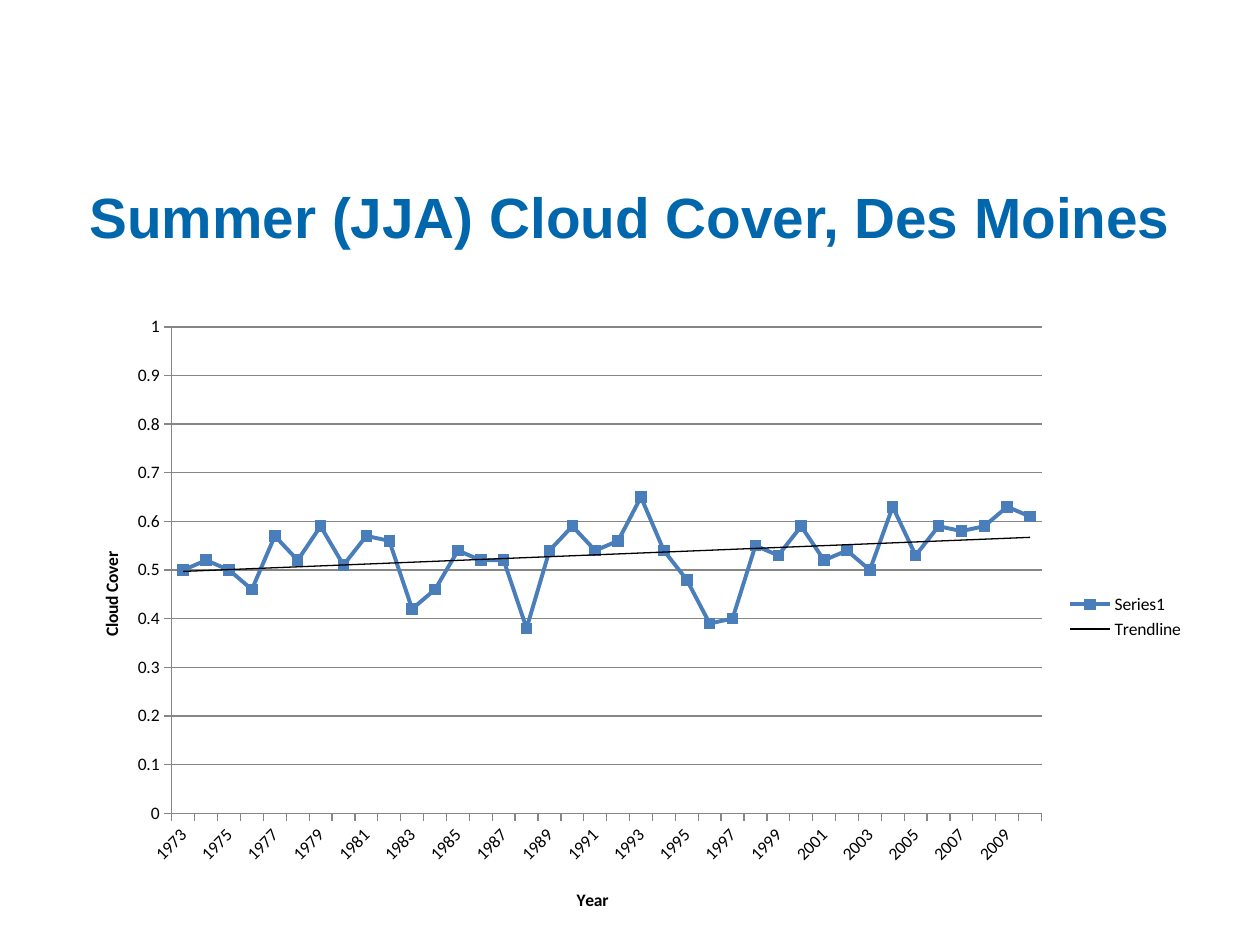
from pptx import Presentation
from pptx.chart.data import CategoryChartData
from pptx.dml.color import RGBColor as RGB
from pptx.enum.chart import XL_CHART_TYPE as ChartType, XL_LEGEND_POSITION as LegendPos
from pptx.enum.chart import XL_MARKER_STYLE as Marker, XL_TICK_MARK as Tick
from pptx.enum.text import MSO_ANCHOR as Anchor, PP_ALIGN as Align
from pptx.oxml import parse_xml
from pptx.oxml.ns import nsdecls
from pptx.util import Cm, Pt

COLORS = {"heading": "0067AC", "series": "4F81BD", "line": "4A7EBB",
          "grid": "868686", "text": "000000"}
CLOUD_COVER = [
    0.5, 0.52, 0.5, 0.46, 0.57, 0.52, 0.59, 0.51, 0.57, 0.56,
    0.42, 0.46, 0.54, 0.52, 0.52, 0.38, 0.54, 0.59, 0.54, 0.56,
    0.65, 0.54, 0.48, 0.39, 0.4, 0.55, 0.53, 0.59, 0.52, 0.54,
    0.5, 0.63, 0.53, 0.59, 0.58, 0.59, 0.63, 0.61]
FIRST_YEAR = 1973


def set_font(font, color, **values):
    for name, value in values.items():
        setattr(font, name, value)
    font.color.rgb = RGB.from_string(COLORS[color])


def place(parent, index, **fractions):
    """Give a chart part a fixed place, in fractions of the chart area."""
    for old in parent.xpath("c:layout"):
        parent.remove(old)
    target = '<c:layoutTarget val="inner"/>' if "w" in fractions else ""
    modes = "".join(f'<c:{key}Mode val="edge"/>' for key in "xy")
    sizes = "".join(f'<c:{key} val="{val}"/>' for key, val in fractions.items())
    parent.insert(index, parse_xml(
        f'<c:layout {nsdecls("c")}><c:manualLayout>{target}{modes}{sizes}'
        '</c:manualLayout></c:layout>'))


deck = Presentation()
deck.slide_width, deck.slide_height = Cm(25.4), Cm(19.05)
slide = deck.slides.add_slide(deck.slide_layouts[6])

# Heading
heading = slide.shapes.add_textbox(Cm(0.56), Cm(3.51), Cm(24.28), Cm(1.65)).text_frame
heading_format = {"word_wrap": True, "vertical_anchor": Anchor.BOTTOM}
for name, value in heading_format.items():
    setattr(heading, name, value)
heading_line = heading.paragraphs[0]
heading_line.alignment = Align.CENTER
heading_run = heading_line.add_run()
heading_run.text = "Summer (JJA) Cloud Cover, Des Moines"
set_font(heading_run.font, "heading", name="Arial", size=Pt(32.4), bold=True)

# Cloud cover by year
cover_data = CategoryChartData()
cover_data.categories = [str(FIRST_YEAR + i) for i in range(len(CLOUD_COVER))]
cover_data.add_series("Series1", CLOUD_COVER)
chart = slide.shapes.add_chart(ChartType.LINE_MARKERS, Cm(1.27), Cm(6.15),
                               Cm(22.86), Cm(12.57), cover_data).chart
set_font(chart.font, "text", name="Calibri", size=Pt(10))
chart.has_title = False
chart.has_legend = True
chart.legend.position = LegendPos.RIGHT
chart.legend.include_in_layout = False

plot = chart.plots[0]
plot.vary_by_categories = False
cover = plot.series[0]
cover.smooth = False
cover.format.line.width = Pt(2.25)
cover.format.line.color.rgb = RGB.from_string(COLORS["line"])
cover.marker.style, cover.marker.size = Marker.SQUARE, 6
cover.marker.format.fill.solid()
cover.marker.format.fill.fore_color.rgb = RGB.from_string(COLORS["series"])
cover.marker.format.line.color.rgb = RGB.from_string(COLORS["line"])

# Linear trend
chart.element.xpath(".//c:ser/c:cat")[0].addprevious(parse_xml(
    f'<c:trendline {nsdecls("c", "a")}><c:name>Trendline</c:name>'
    '<c:spPr><a:ln w="9525"><a:solidFill>'
    f'<a:srgbClr val="{COLORS["text"]}"/></a:solidFill></a:ln></c:spPr>'
    '<c:trendlineType val="linear"/><c:dispRSqr val="0"/><c:dispEq val="0"/>'
    '</c:trendline>'))

# Axes
years, cover_scale = chart.category_axis, chart.value_axis
scale_format = {"minimum_scale": 0, "maximum_scale": 1, "major_unit": 0.1,
                "has_major_gridlines": True}
for name, value in scale_format.items():
    setattr(cover_scale, name, value)
cover_scale.tick_labels.number_format = "General"
cover_scale.tick_labels.number_format_is_linked = False

for axis, title, spot in [(years, "Year", {"x": 0.45, "y": 0.93}),
                          (cover_scale, "Cloud Cover", {"x": 0.03, "y": 0.39})]:
    axis.major_tick_mark, axis.minor_tick_mark = Tick.OUTSIDE, Tick.NONE
    title_text = axis.axis_title.text_frame
    title_text.text = title
    set_font(title_text.paragraphs[0].runs[0].font, "text",
             name="Calibri", size=Pt(10), bold=True)
    place(axis.axis_title.element, 1, **spot)
    set_font(axis.tick_labels.font, "text", name="Calibri", size=Pt(10))
for rule in (years, cover_scale, cover_scale.major_gridlines):
    rule.format.line.width = Pt(0.75)
    rule.format.line.color.rgb = RGB.from_string(COLORS["grid"])

# Slanted labels on every second year
years_xml = chart.element.xpath(".//c:catAx")[0]
years_xml.xpath("c:txPr/a:bodyPr")[0].set("rot", "-2700000")
years_xml.xpath("c:noMultiLvlLbl")[0].addprevious(
    parse_xml(f'<c:tickLblSkip {nsdecls("c")} val="2"/>'))

place(chart.element.xpath(".//c:plotArea")[0], 0, x=0.096, y=0.035, w=0.767, h=0.78)

deck.save("out.pptx")
